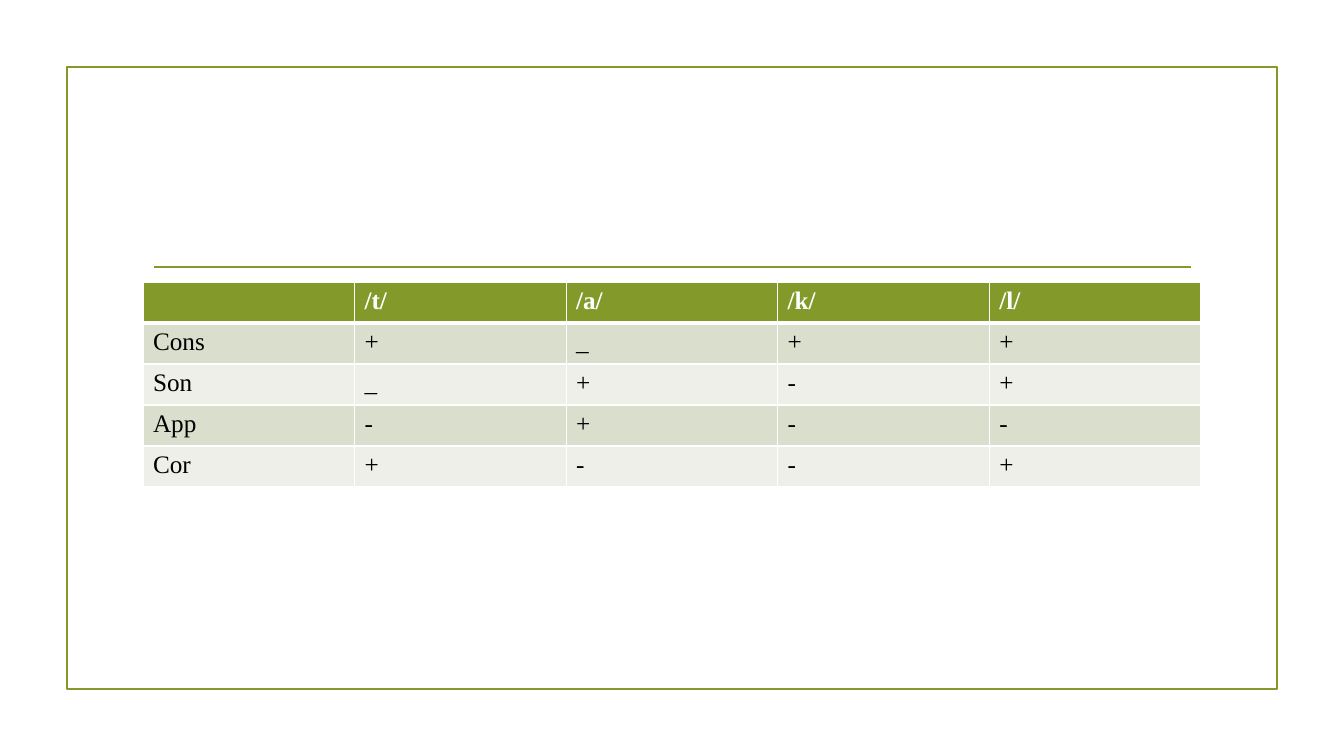
"""Build a slide with a table of phonological features inside a green frame."""
from dataclasses import dataclass

from lxml import etree
from pptx import Presentation
from pptx.dml.color import RGBColor
from pptx.enum.shapes import MSO_CONNECTOR, MSO_SHAPE
from pptx.oxml.ns import qn
from pptx.util import Emu, Pt

RECTANGLE = MSO_SHAPE.RECTANGLE
STRAIGHT = MSO_CONNECTOR.STRAIGHT
SLIDE_WIDTH, SLIDE_HEIGHT = 1344, 756
EMU_PER_PX = 12192000 / SLIDE_WIDTH
GREEN, WHITE, BLACK = "83992A", "FFFFFF", "000000"
BANDS = ("D9DECD", "EDEFE8")
FONT = "Times New Roman"
FEATURES = (
    ("", "/t/", "/a/", "/k/", "/l/"),
    ("Cons", "+", "_", "+", "+"),
    ("Son", "_", "+", "-", "+"),
    ("App", "-", "+", "-", "-"),
    ("Cor", "+", "-", "-", "+"),
)


@dataclass(frozen=True)
class RowStyle:
    """Look of one table row, with border widths in points."""
    fill: str
    text: str
    bold: bool
    top: int
    bottom: int


def px(length: int) -> Emu:
    """Turn pixels into EMU."""
    return Emu(round(length * EMU_PER_PX))


def color(value: str) -> RGBColor:
    """Turn a hex string into a colour."""
    return RGBColor.from_string(value)


def style_line(line) -> None:
    """Give a line the green outline."""
    line.color.rgb = color(GREEN)
    line.width = Pt(1.25)


def add_frame(slide, left: int, top: int, width: int, height: int) -> None:
    """Draw the unfilled frame."""
    frame = slide.shapes.add_shape(RECTANGLE, px(left), px(top), px(width), px(height))
    frame.shadow.inherit = False
    frame.fill.background()
    style_line(frame.line)


def add_rule(slide, left: int, right: int, top: int) -> None:
    """Draw the horizontal rule above the table."""
    rule = slide.shapes.add_connector(STRAIGHT, px(left), px(top), px(right), px(top))
    style_line(rule.line)
    etree.SubElement(rule._element.spPr, qn("a:effectLst"))


def add_border(cell, side: str, points: int) -> None:
    """Add a white border to one side of a cell."""
    border = etree.SubElement(cell._tc.get_or_add_tcPr(), qn(f"a:ln{side}"), w=str(Pt(points)))
    fill = etree.SubElement(border, qn("a:solidFill"))
    etree.SubElement(fill, qn("a:srgbClr"), val=WHITE)


def row_style(index: int) -> RowStyle:
    """Choose the header style or one of the alternating bands."""
    if index == 0:
        return RowStyle(GREEN, WHITE, True, 1, 3)
    return RowStyle(BANDS[(index - 1) % 2], BLACK, False, 3 if index == 1 else 1, 1)


def fill_cell(cell, text: str, style: RowStyle) -> None:
    """Write and style one cell."""
    for side, points in (("L", 1), ("R", 1), ("T", style.top), ("B", style.bottom)):
        add_border(cell, side, points)
    cell.fill.solid()
    cell.fill.fore_color.rgb = color(style.fill)
    if text:
        span = cell.text_frame.paragraphs[0].add_run()
        span.text = text
        span.font.name = FONT
        span.font.size = Pt(18)
        span.font.bold = style.bold
        span.font.color.rgb = color(style.text)


def add_features(slide, left: int, top: int, width: int, height: int) -> None:
    """Draw the feature table."""
    rows, columns = len(FEATURES), len(FEATURES[0])
    table = slide.shapes.add_table(
        rows, columns, px(left), px(top), px(width), px(height)).table
    for row, texts in enumerate(FEATURES):
        for column, text in enumerate(texts):
            fill_cell(table.cell(row, column), text, row_style(row))


def main() -> None:
    """Build and save the deck."""
    deck = Presentation()
    deck.slide_width, deck.slide_height = px(SLIDE_WIDTH), px(SLIDE_HEIGHT)
    page = deck.slides.add_slide(deck.slide_layouts[6])
    add_frame(page, 67, 67, 1210, 622)
    add_rule(page, 154, 1191, 267)
    add_features(page, 143, 282, 1058, 205)
    deck.save("out.pptx")


if __name__ == "__main__":
    main()
